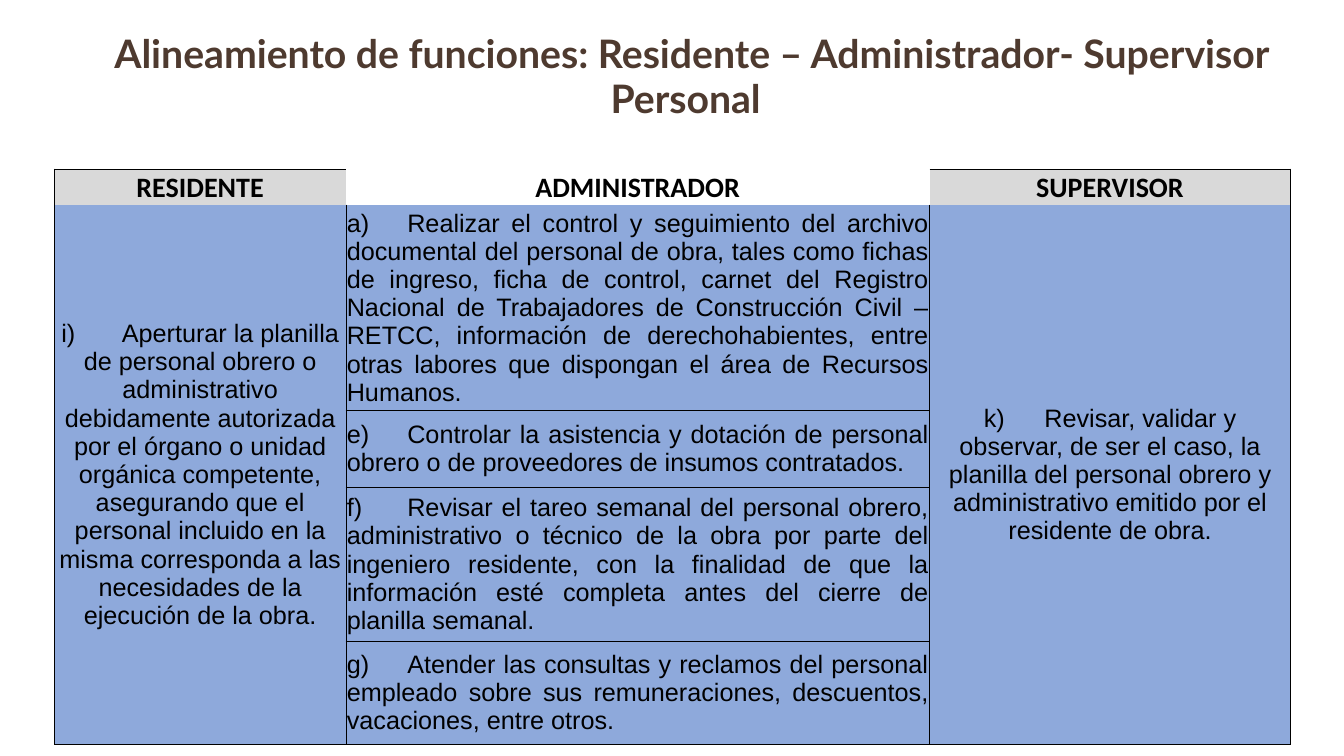
"""Build a slide aligning the personnel duties of three site roles."""
from lxml.etree import SubElement
from pptx import Presentation
from pptx.dml.color import RGBColor
from pptx.enum.text import MSO_ANCHOR as Anchor, MSO_AUTO_SIZE as AutoSize, PP_ALIGN as Align
from pptx.oxml.ns import qn
from pptx.util import Inches, Pt

TITLE = ["Alineamiento de funciones: Residente – Administrador- Supervisor", "Personal"]
ROLES = ["RESIDENTE", "ADMINISTRADOR", "SUPERVISOR"]
HEADER_FILLS = ["D9D9D9", None, "D9D9D9"]
HEADER_SIDES = ["LT", "", "TR"]
RESIDENT = ("i)", "Aperturar la planilla de personal obrero o administrativo debidamente "
            "autorizada por el órgano o unidad orgánica competente, asegurando que el personal "
            "incluido en la misma corresponda a las necesidades de la ejecución de la obra.")
ADMINISTRATOR = [
    ("a)", "Realizar el control y seguimiento del archivo documental del personal de obra, "
     "tales como fichas de ingreso, ficha de control, carnet del Registro Nacional de "
     "Trabajadores de Construcción Civil – RETCC, información de derechohabientes, entre "
     "otras labores que dispongan el área de Recursos Humanos."),
    ("e)", "Controlar la asistencia y dotación de personal obrero o de proveedores de "
     "insumos contratados."),
    ("f)", "Revisar el tareo semanal del personal obrero, administrativo o técnico de la obra "
     "por parte del ingeniero residente, con la finalidad de que la información esté completa "
     "antes del cierre de planilla semanal."),
    ("g)", "Atender las consultas y reclamos del personal empleado sobre sus remuneraciones, "
     "descuentos, vacaciones, entre otros."),
]
SUPERVISOR = ("k)", "Revisar, validar y observar, de ser el caso, la planilla del personal "
              "obrero y administrativo emitido por el residente de obra.")

COLUMNS = [2.89, 5.79, 3.58]
ROWS = [0.34, 2.04, 0.76, 1.53, 1.02]
LEFT, TOP = 0.54, 1.68
TAB_STOP = 0.6
DUTY_FILL = "8EA9DB"
TITLE_FONT = {"name": "Lato", "size": Pt(28), "bold": True}
HEADER_FONT = {"name": "Calibri", "size": Pt(20), "bold": True}
DUTY_FONT = {"name": "Arial", "size": Pt(18), "bold": False}
CELL_FORMAT = {"margin_left": Inches(0.01), "margin_right": Inches(0.01),
               "margin_top": Inches(0.01), "margin_bottom": 0}


def color(code):
    return RGBColor.from_string(code)


def set_all(target, values):
    for name, value in values.items():
        setattr(target, name, value)


def add_span(para, text, font, code="000000"):
    span = para.add_run()
    span.text = text
    set_all(span.font, font)
    span.font.color.rgb = color(code)


def set_borders(cell, sides, width):
    properties = cell._tc.get_or_add_tcPr()
    for side in "LRTB":
        line = SubElement(properties, qn(f"a:ln{side}"), w=str(Pt(width)))
        if side in sides:
            paint = SubElement(line, qn("a:solidFill"))
            SubElement(paint, qn("a:srgbClr"), val="000000")
        else:
            SubElement(line, qn("a:noFill"))


def format_cell(cell, sides, width, fill, anchor):
    set_all(cell, {**CELL_FORMAT, "vertical_anchor": anchor})
    set_borders(cell, sides, width)
    if fill:
        cell.fill.solid()
        cell.fill.fore_color.rgb = color(fill)
    else:
        cell.fill.background()


def write_duty(cell, duty, align):
    para = cell.text_frame.paragraphs[0]
    para.alignment = align
    stops = SubElement(para._p.get_or_add_pPr(), qn("a:tabLst"))
    SubElement(stops, qn("a:tab"), pos=str(Inches(TAB_STOP)), algn="l")
    add_span(para, "\t".join(duty), DUTY_FONT)


def add_title(page):
    title = page.shapes.title
    set_all(title, {"left": Inches(LEFT), "top": 0,
                    "width": Inches(12.52), "height": Inches(1.45)})
    frame = title.text_frame
    set_all(frame, {"margin_left": 0, "margin_right": 0, "margin_top": 0, "margin_bottom": 0,
                    "vertical_anchor": Anchor.MIDDLE, "word_wrap": True,
                    "auto_size": AutoSize.NONE})
    para = frame.paragraphs[0]
    set_all(para, {"alignment": Align.CENTER, "line_spacing": 0.9})
    add_span(para, " ", {**TITLE_FONT, "size": Pt(36)}, "4E3A2F")
    add_span(para, TITLE[0], TITLE_FONT, "4E3A2F")
    para.add_line_break()
    add_span(para, TITLE[1], TITLE_FONT, "4E3A2F")


def add_duties(page):
    table = page.shapes.add_table(len(ROWS), len(COLUMNS), Inches(LEFT), Inches(TOP),
                                  Inches(sum(COLUMNS)), Inches(sum(ROWS))).table
    set_all(table, {"first_row": False, "horz_banding": False})
    for column, width in zip(table.columns, COLUMNS):
        column.width = Inches(width)
    for row, height in zip(table.rows, ROWS):
        row.height = Inches(height)

    for index, role in enumerate(ROLES):
        cell = table.cell(0, index)
        format_cell(cell, HEADER_SIDES[index], 1, HEADER_FILLS[index], Anchor.BOTTOM)
        para = cell.text_frame.paragraphs[0]
        para.alignment = Align.CENTER
        add_span(para, role, HEADER_FONT)

    last = len(ROWS) - 1
    for index, duty in ((0, RESIDENT), (2, SUPERVISOR)):
        table.cell(1, index).merge(table.cell(last, index))
        write_duty(table.cell(1, index), duty, Align.CENTER)
    for row, duty in enumerate(ADMINISTRATOR, 1):
        write_duty(table.cell(row, 1), duty, Align.JUSTIFY)
        for index in range(len(COLUMNS)):
            sides = "LRTB" if index == 1 and row > 1 else "LRB"
            format_cell(table.cell(row, index), sides, 0.5, DUTY_FILL, Anchor.MIDDLE)


def main():
    deck = Presentation()
    set_all(deck, {"slide_width": Inches(13.33), "slide_height": Inches(7.5)})
    page = deck.slides.add_slide(deck.slide_layouts[5])
    add_title(page)
    add_duties(page)
    deck.save("out.pptx")


if __name__ == "__main__":
    main()
